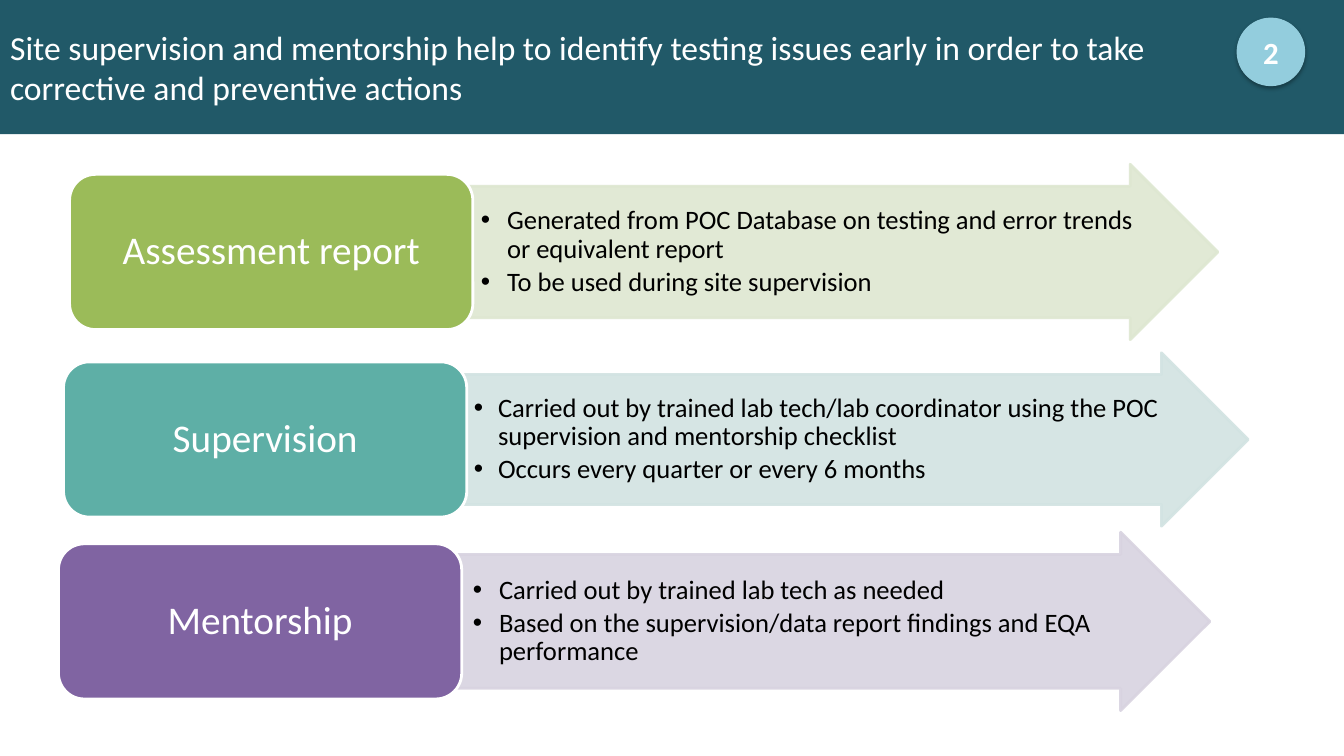
from lxml.etree import SubElement
from pptx import Presentation
from pptx.dml.color import RGBColor
from pptx.enum.shapes import MSO_SHAPE as Shape
from pptx.enum.text import MSO_ANCHOR as Anchor, PP_ALIGN as Align
from pptx.oxml.ns import qn
from pptx.util import Inches, Pt

COLORS = {
    "header": "215968", "white": "FFFFFF", "black": "000000", "badge": "93CDDD",
    "green": "9BBB59", "pale_green": "DEE7D1",
    "teal": "5EAFA6", "pale_teal": "D2E3E2",
    "purple": "8064A2", "pale_purple": "D8D3E0",
}
TAG_WIDTH, TAG_HEIGHT = 4, 1.54
TITLE = ("Site supervision and mentorship help to identify testing issues early "
         "in order to take\vcorrective and preventive actions")
ROWS = [
    {"box": (0.69, 1.63, 11.39, 1.74), "overlap": 0.11, "hang": (0.44, 0.26),
     "color": "green", "label": "Assessment report",
     "points": ["Generated from POC Database on testing and error trends or equivalent report",
                "To be used during site supervision"]},
    {"box": (0.63, 3.5, 11.75, 1.72), "overlap": 0.08, "hang": (0.38, 0.24),
     "color": "teal", "label": "Supervision",
     "points": ["Carried out by trained lab tech/lab coordinator using the POC "
                "supervision and mentorship checklist",
                "Occurs every quarter or every 6 months"]},
    {"box": (0.58, 5.28, 11.42, 1.77), "overlap": 0.08, "hang": (0.44, 0.26),
     "color": "purple", "label": "Mentorship",
     "points": ["Carried out by trained lab tech as needed",
                "Based on the supervision/data report findings and EQA performance"]},
]


def rgb(name):
    return RGBColor.from_string(COLORS[name])


def apply(target, values):
    for name, value in values.items():
        setattr(target, name, value)


def place(shape, box):
    apply(shape, dict(zip(("left", "top", "width", "height"), map(Inches, box))))


def paint(shape, fill, line, width):
    shape.shadow.inherit = False
    shape.fill.solid()
    shape.fill.fore_color.rgb = rgb(fill)
    shape.line.color.rgb = rgb(line)
    shape.line.width = Pt(width)


def write(shape, texts, size, color, align, inset=(0.1, 0.05), bold=False, **spacing):
    frame = shape.text_frame
    side, edge = map(Inches, inset)
    apply(frame, {"word_wrap": True, "vertical_anchor": Anchor.MIDDLE,
                  "margin_left": side, "margin_right": side,
                  "margin_top": edge, "margin_bottom": edge})
    for index, text in enumerate(texts):
        para = frame.paragraphs[0] if index == 0 else frame.add_paragraph()
        para.text = text
        apply(para, {"alignment": align, **spacing})
        for span in para.runs:
            apply(span.font, {"name": "Calibri", "size": Pt(size), "bold": bold})
            span.font.color.rgb = rgb(color)
    return frame.paragraphs


def add_bullet(para, indent, hanging):
    props = para._p.get_or_add_pPr()
    props.set("marL", str(Inches(indent)))
    props.set("indent", str(-Inches(hanging)))
    SubElement(props, qn("a:buFont")).set("typeface", "Arial")
    SubElement(props, qn("a:buChar")).set("char", "•")


def add_alpha(shape, percent):
    for color in shape._element.spPr.iter(qn("a:srgbClr")):
        SubElement(color, qn("a:alpha")).set("val", str(percent * 1000))


def add_shadow(shape):
    effects = shape._element.spPr.find(qn("a:effectLst"))
    shadow = SubElement(effects, qn("a:outerShdw"), blurRad=str(Pt(3.1)),
                        dist=str(Pt(1.8)), dir="5400000", rotWithShape="0")
    color = SubElement(shadow, qn("a:srgbClr"), val=COLORS["black"])
    SubElement(color, qn("a:alpha"), val="35000")


def add_header(page, box):
    title = page.shapes.title
    place(title, box)
    title.fill.solid()
    title.fill.fore_color.rgb = rgb("header")
    write(title, [TITLE], 24, "white", Align.LEFT)


def add_row(page, box, overlap, hang, color, label, points):
    left, top, width, height = box
    shift = TAG_WIDTH - overlap
    arrow = page.shapes.add_shape(Shape.RIGHT_ARROW, 0, 0, 0, 0)
    place(arrow, (left + shift, top, width - shift, height))
    arrow.adjustments[0] = 0.75
    arrow.adjustments[1] = 0.5
    paint(arrow, f"pale_{color}", f"pale_{color}", 2)
    add_alpha(arrow, 90)
    for para in write(arrow, points, 19, "black", Align.LEFT, (0.01, 0.01),
                      line_spacing=0.9, space_after=Pt(3)):
        add_bullet(para, *hang)

    tag = page.shapes.add_shape(Shape.ROUNDED_RECTANGLE, 0, 0, 0, 0)
    place(tag, (left, top + (height - TAG_HEIGHT) / 2, TAG_WIDTH, TAG_HEIGHT))
    paint(tag, color, "white", 2)
    write(tag, [label], 28, "white", Align.CENTER, (0.12, 0.06), line_spacing=0.9)


def add_badge(page, box, number):
    badge = page.shapes.add_shape(Shape.OVAL, 0, 0, 0, 0)
    place(badge, box)
    paint(badge, "badge", "badge", 0.75)
    add_shadow(badge)
    write(badge, [number], 22, "white", Align.CENTER, bold=True)


def main():
    deck = Presentation()
    apply(deck, {"slide_width": Inches(13.33), "slide_height": Inches(7.5)})
    page = deck.slides.add_slide(deck.slide_layouts[5])
    add_header(page, (0, 0, 13.33, 1.33))
    for row in ROWS:
        add_row(page, **row)
    add_badge(page, (12.27, 0.18, 0.67, 0.67), "2")
    deck.save("out.pptx")


if __name__ == "__main__":
    main()
